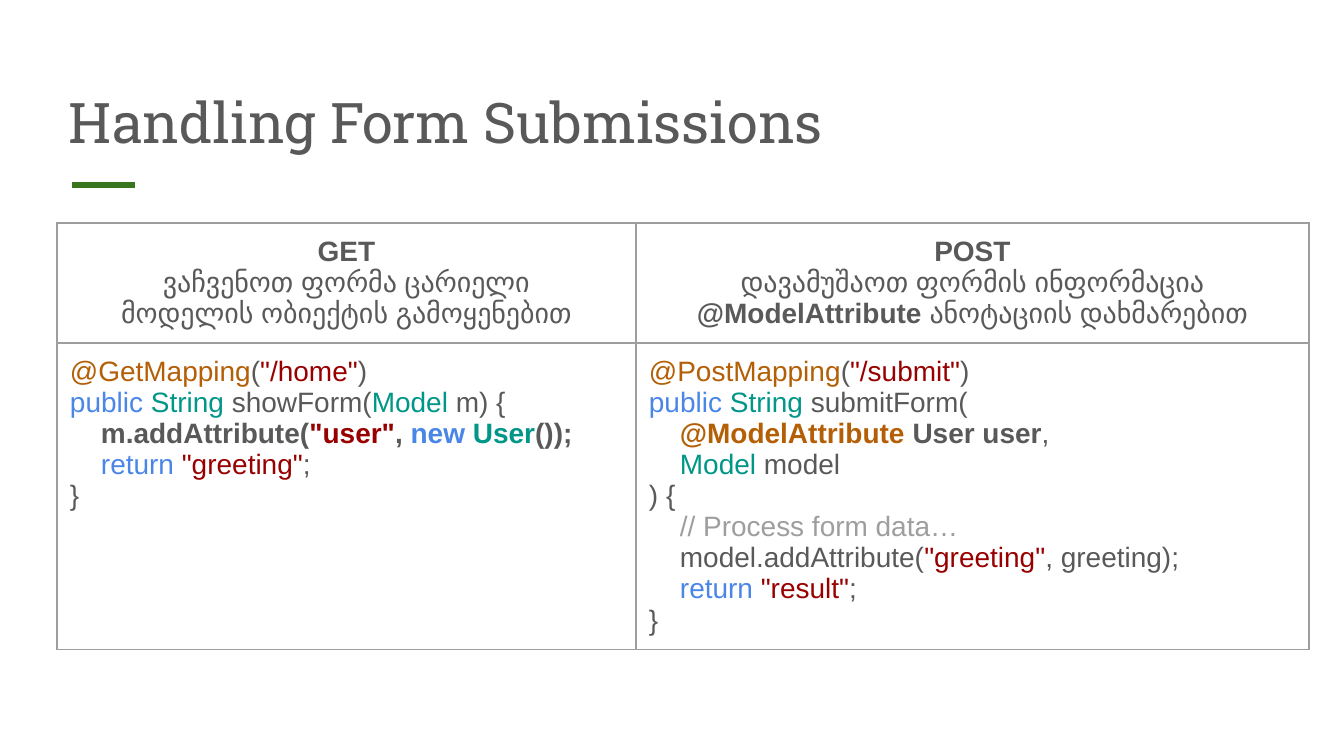
import pptx
import pptx.dml.color
import pptx.enum.shapes
import pptx.enum.text
import pptx.oxml
import pptx.oxml.ns
import pptx.util

RGB = pptx.dml.color.RGBColor
GRAY = RGB(0x59, 0x59, 0x59)
PALE = RGB(0x9E, 0x9E, 0x9E)
GREEN = RGB(0x38, 0x76, 0x1D)
BROWN = RGB(0xB4, 0x5F, 0x06)
RED = RGB(0x98, 0x00, 0x00)
BLUE = RGB(0x4A, 0x86, 0xE8)
TEAL = RGB(0x00, 0x96, 0x88)
BOLD = True

TITLE = "Handling Form Submissions"

# A line is (indent level, runs); a run is (text, colour[, BOLD]).
GET_HEAD = [
    (0, [("GET", GRAY, BOLD)]),
    (0, [("ვაჩვენოთ ფორმა ცარიელი", GRAY)]),
    (0, [("მოდელის ობიექტის გამოყენებით", GRAY)]),
]
POST_HEAD = [
    (0, [("POST", GRAY, BOLD)]),
    (0, [("დავამუშაოთ ფორმის ინფორმაცია ", GRAY),
         ("@ModelAttribute ", GRAY, BOLD), ("ანოტაციის დახმარებით", GRAY)]),
]
GET_CODE = [
    (0, [("@GetMapping", BROWN), ("(", GRAY), ('"/home"', RED), (")", GRAY)]),
    (0, [("public ", BLUE), ("String ", TEAL), ("showForm(", GRAY),
         ("Model", TEAL), (" m) {", GRAY)]),
    (1, [("m.addAttribute(", GRAY, BOLD), ('"user"', RED, BOLD),
         (", ", GRAY, BOLD), ("new ", BLUE, BOLD), ("User", TEAL, BOLD),
         ("());", GRAY, BOLD)]),
    (1, [("return ", BLUE), ('"greeting"', RED), (";", GRAY)]),
    (0, [("}", GRAY)]),
]
POST_CODE = [
    (0, [("@PostMapping", BROWN), ("(", GRAY), ('"/submit"', RED),
         (")", GRAY)]),
    (0, [("public ", BLUE), ("String ", TEAL), ("submitForm(", GRAY)]),
    (1, [("@ModelAttribute", BROWN, BOLD), (" User user", GRAY, BOLD),
         (",", GRAY)]),
    (1, [("Model ", TEAL), ("model", GRAY)]),
    (0, [(") {", GRAY)]),
    (1, [("// Process form data…", PALE)]),
    (1, [("model.addAttribute(", GRAY), ('"greeting"', RED),
         (", greeting);", GRAY)]),
    (1, [("return ", BLUE), ('"result"', RED), (";", GRAY)]),
    (0, [("}", GRAY)]),
]
ROWS = [(GET_HEAD, POST_HEAD), (GET_CODE, POST_CODE)]
WIDTHS = [579, 673]
HEIGHTS = [120, 307]
INDENT = 31
PAD = 13


def px(n):
    return pptx.util.Emu(round(n * 914400 / 134.4))


def add_run(para, text, color, bold=False, size=15, face="Arial"):
    run = para.add_run()
    run.text = text
    font = run.font
    font.name, font.size, font.bold = face, pptx.util.Pt(size), bold
    font.color.rgb = color


def set_edges(cell):
    """Draw a thin line on all four sides of the cell."""
    props = cell._tc.get_or_add_tcPr()
    for side in "LRTB":
        props.append(pptx.oxml.parse_xml(
            f'<a:ln{side} {pptx.oxml.ns.nsdecls("a")} w="9525"><a:solidFill>'
            f'<a:srgbClr val="{PALE}"/></a:solidFill></a:ln{side}>'))


def fill_cell(cell, lines, align):
    set_edges(cell)
    cell.fill.background()
    cell.margin_left = cell.margin_right = px(PAD)
    cell.margin_top = cell.margin_bottom = px(PAD)
    frame = cell.text_frame
    for i, (level, runs) in enumerate(lines):
        para = frame.add_paragraph() if i else frame.paragraphs[0]
        para.alignment = align
        props = para._p.get_or_add_pPr()
        props.set("marL", str(px(level * INDENT)))
        props.set("indent", "0")
        for run in runs:
            add_run(para, *run)


def add_title(slide):
    box = slide.shapes.add_textbox(px(56), px(67), px(1230), px(101))
    frame = box.text_frame
    frame.word_wrap = True
    frame.vertical_anchor = pptx.enum.text.MSO_ANCHOR.BOTTOM
    frame.margin_left = frame.margin_right = px(PAD)
    frame.margin_top = frame.margin_bottom = px(PAD)
    add_run(frame.paragraphs[0], TITLE, GRAY, size=30, face="Roboto Slab")


def add_rule(slide):
    rule = slide.shapes.add_connector(
        pptx.enum.shapes.MSO_CONNECTOR.STRAIGHT,
        px(72), px(185), px(135), px(185))
    rule.line.color.rgb = GREEN
    rule.line.width = pptx.util.Pt(3)
    rule._element.spPr.append(pptx.oxml.parse_xml(
        f'<a:effectLst {pptx.oxml.ns.nsdecls("a")}/>'))


def add_grid(slide):
    table = slide.shapes.add_table(
        len(HEIGHTS), len(WIDTHS), px(57), px(223),
        px(sum(WIDTHS)), px(sum(HEIGHTS))).table
    table.first_row = table.horz_banding = False
    for col, width in zip(table.columns, WIDTHS):
        col.width = px(width)
    kinds = pptx.enum.text.PP_ALIGN
    for r, (row, align) in enumerate(zip(ROWS, (kinds.CENTER, kinds.LEFT))):
        table.rows[r].height = px(HEIGHTS[r])
        for c, lines in enumerate(row):
            fill_cell(table.cell(r, c), lines, align)


def main():
    deck = pptx.Presentation()
    deck.slide_width, deck.slide_height = px(1344), px(756)
    slide = deck.slides.add_slide(deck.slide_layouts[6])
    add_rule(slide)
    add_grid(slide)
    add_title(slide)
    deck.save("out.pptx")


if __name__ == "__main__":
    main()
